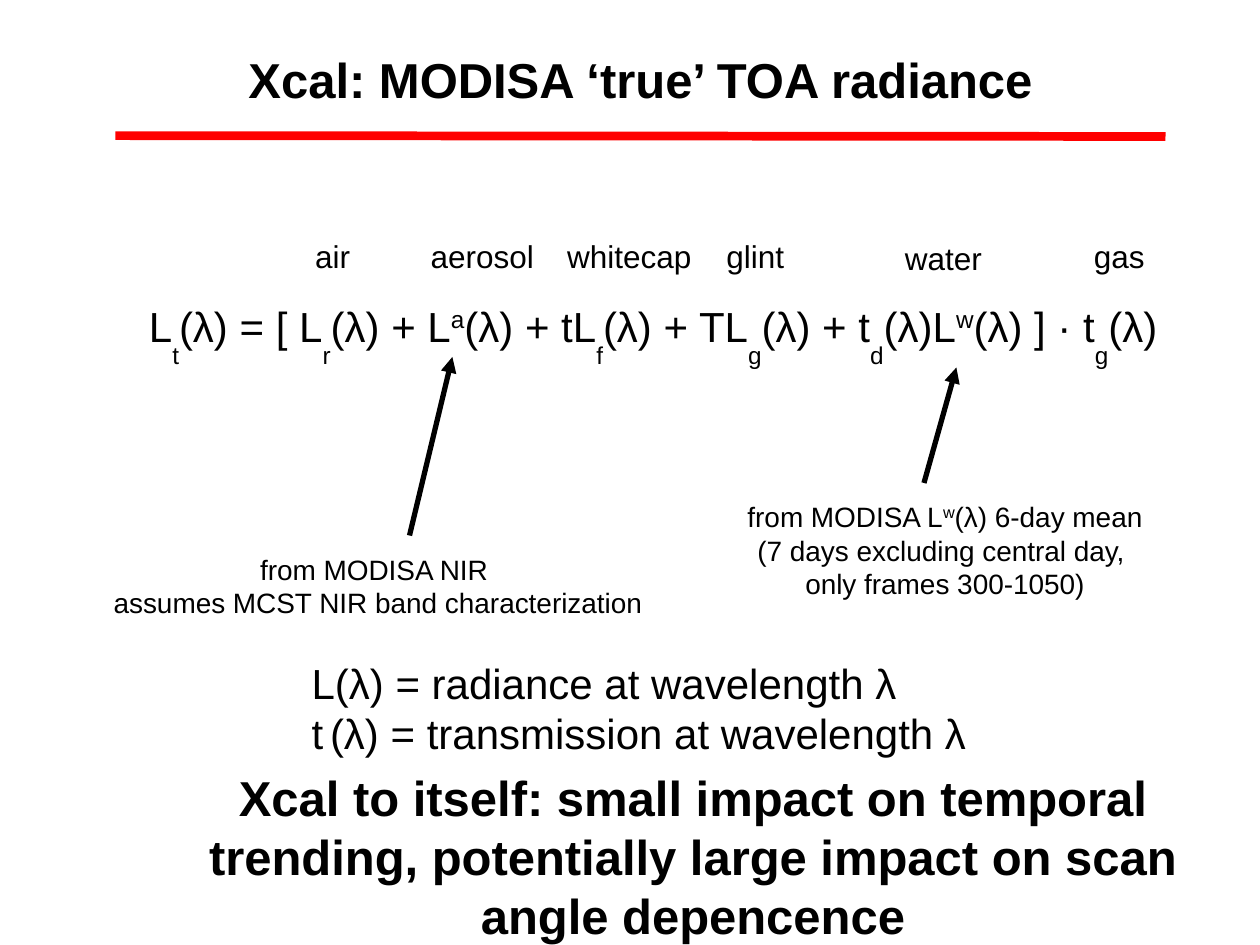
from lxml import etree
from pptx import Presentation
from pptx.dml.color import RGBColor
from pptx.enum.shapes import MSO_CONNECTOR as Connector
from pptx.enum.text import MSO_ANCHOR as Anchor, PP_ALIGN as Align
from pptx.oxml.ns import qn
from pptx.util import Pt

BASELINES = {"_": "-52000", "^": "33000"}


def color(hex_string):
    return RGBColor.from_string(hex_string)


def fill_paragraph(paragraph, marked_text, size, bold, align):
    """Write text whose pieces between bars are subscripts (_) or superscripts (^)."""
    paragraph.alignment = align
    for piece in marked_text.split("|"):
        run = paragraph.add_run()
        baseline = BASELINES.get(piece[0])
        run.text = piece[1:] if baseline else piece
        run.font.name = "Arial"
        run.font.size = Pt(size)
        run.font.bold = bold
        run.font.color.rgb = color("000000")
        if baseline:
            run._r.get_or_add_rPr().set("baseline", baseline)


def fill_frame(frame, lines, size, bold=False, align=Align.LEFT, anchor=Anchor.TOP):
    frame.word_wrap = True
    frame.vertical_anchor = anchor
    for index, line in enumerate(lines):
        paragraph = frame.add_paragraph() if index else frame.paragraphs[0]
        fill_paragraph(paragraph, line, size, bold, align)


def add_text(slide, box, lines, size, **style):
    text_box = slide.shapes.add_textbox(*map(Pt, box))
    fill_frame(text_box.text_frame, lines, size, **style)


def add_line(slide, start, end, hex_string, width, arrow=False):
    line = slide.shapes.add_connector(Connector.STRAIGHT, *map(Pt, start + end))
    line.line.color.rgb = color(hex_string)
    line.line.width = Pt(width)
    if arrow:
        etree.SubElement(line.line._get_or_add_ln(), qn("a:tailEnd"), type="triangle")
    etree.SubElement(line._element.spPr, qn("a:effectLst"))


def add_heading(slide, box):
    left, top, width, height = box
    title = slide.shapes.title
    title.left, title.top, title.width, title.height = map(Pt, box)
    fill_frame(title.text_frame, ["Xcal: MODISA ‘true’ TOA radiance"], 28,
               bold=True, align=Align.CENTER, anchor=Anchor.MIDDLE)
    add_line(slide, (left + 24, top + 65.5), (left + 624, top + 66), "FF0000", 5)


def add_equation(slide, box):
    """Place the radiance equation with a name above each term."""
    left, top, width, height = box
    terms = [("air", 95, 0), ("aerosol", 161, 0), ("whitecap", 239, 0),
             ("glint", 330, 0), ("water", 432, 1), ("gas", 540, 0)]
    for name, offset, drop in terms:
        add_text(slide, (left + offset, top + drop, 96, 29), [name], 18)
    equation = ("L|_t|(λ) = [ L|_r|(λ) + L|^a|(λ) + tL|_f|(λ) + TL|_g|(λ)"
                " + t|_d|(λ)L|^w|(λ) ] · t|_g|(λ)")
    add_text(slide, (left, top + 36, width, height - 36), [equation], 24)


def add_source_note(slide, box, lines, arrow_start, arrow_end):
    """Place a note and an arrow, given from the note's corner, to its term."""
    left, top, width, height = box
    add_text(slide, box, lines, 16, align=Align.CENTER)
    start, end = ((left + x, top + y) for x, y in (arrow_start, arrow_end))
    add_line(slide, start, end, "000000", 3, arrow=True)


def add_legend(slide, box):
    add_text(slide, box, ["L(λ) = radiance at wavelength λ",
                          "t|_ |(λ) = transmission at wavelength λ"], 24)


def add_conclusion(slide, box):
    add_text(slide, box, ["Xcal to itself: small impact on temporal trending, "
                          "potentially large impact on scan angle depencence"],
             28, bold=True, align=Align.CENTER, anchor=Anchor.MIDDLE)


def main():
    presentation = Presentation()
    presentation.slide_width, presentation.slide_height = Pt(720), Pt(540)
    slide = presentation.slides.add_slide(presentation.slide_layouts[5])

    add_heading(slide, (42, 12, 648, 66))
    add_equation(slide, (78, 132, 625, 101))
    add_source_note(slide, (54, 312, 324, 48),
                    ["from MODISA NIR ", "assumes MCST NIR band characterization"],
                    (180, -6), (204.5, -108))
    add_source_note(slide, (372, 282, 336, 48),
                    ["from MODISA L|^w|(λ) 6-day mean",
                     "(7 days excluding central day, ", "only frames 300-1050)"],
                    (156, -6), (174.5, -72))
    add_legend(slide, (171, 372, 393, 94))
    add_conclusion(slide, (72, 456, 648, 66))

    presentation.save("out.pptx")


if __name__ == "__main__":
    main()
